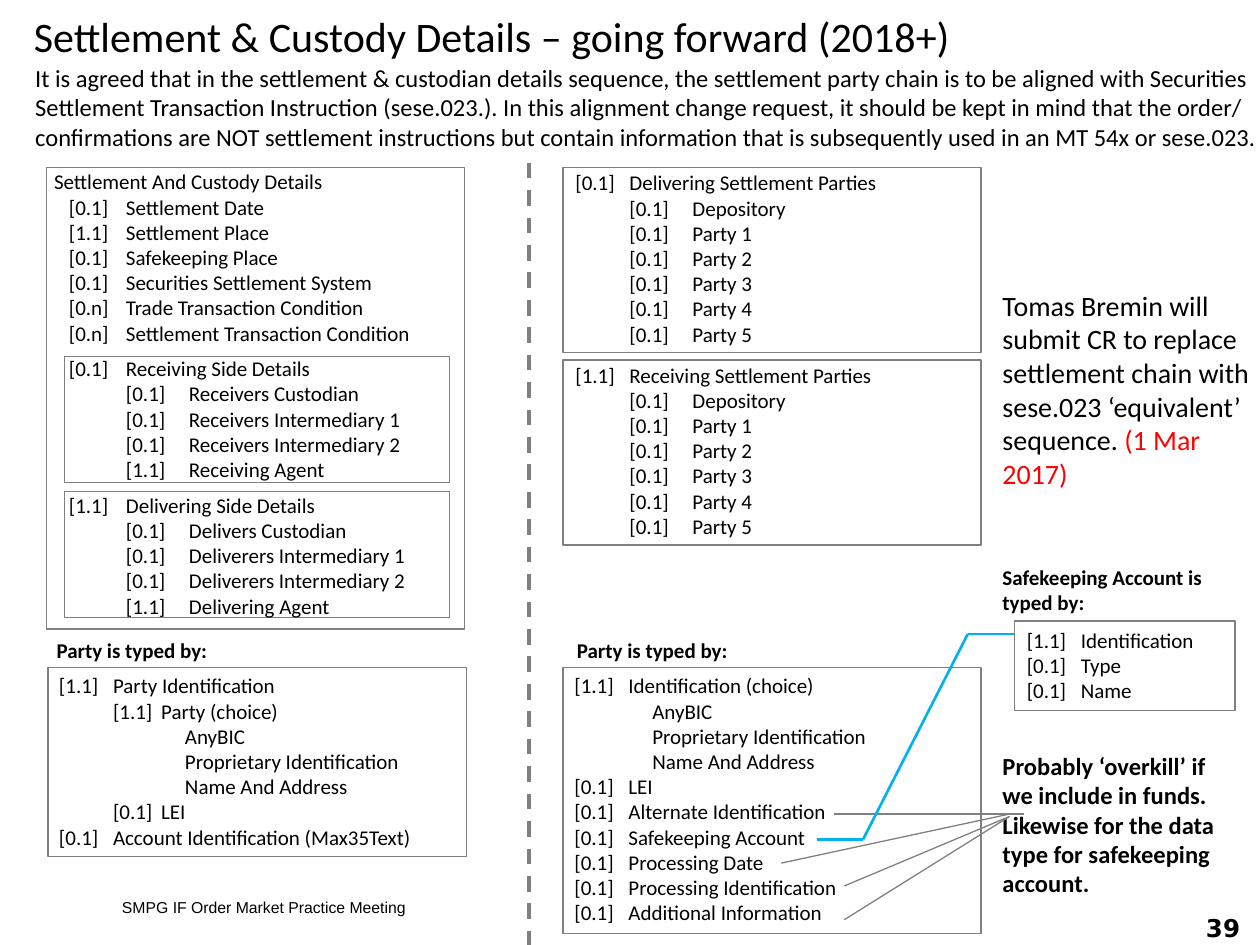
from lxml.etree import SubElement
from pptx import Presentation
from pptx.dml.color import RGBColor
from pptx.enum.dml import MSO_LINE
from pptx.enum.shapes import MSO_CONNECTOR, MSO_SHAPE
from pptx.enum.text import MSO_ANCHOR, MSO_AUTO_SIZE, PP_ALIGN
from pptx.oxml.ns import qn
from pptx.util import Cm, Pt

THEME = {
    "font": "Calibri", "footer_font": "Arial", "number_font": "DejaVu Sans",
    "text": "000000", "alert": "FF0000", "fill": "FFFFFF",
    "line": "808080", "accent": "00B0F0",
    "title": 24, "note": 16, "lead": 14, "list": 12, "footer": 9,
}

# Content: list rows are (leading tabs, multiplicity, name)
TITLE = "Settlement & Custody Details – going forward (2018+)"
LEAD = ("It is agreed that in the settlement & custodian details sequence, the settlement "
        "party chain is to be aligned with Securities Settlement Transaction Instruction "
        "(sese.023.). In this alignment change request, it should be kept in mind that the "
        "order/ confirmations are NOT settlement instructions but contain information that "
        "is subsequently used in an MT 54x or sese.023.")
CUSTODY = [
    (0, "", "Settlement And Custody Details"),
    (1, "[0.1]", "Settlement Date"),
    (1, "[1.1]", "Settlement Place"),
    (1, "[0.1]", "Safekeeping Place"),
    (1, "[0.1]", "Securities Settlement System"),
    (1, "[0.n]", "Trade Transaction Condition"),
    (1, "[0.n]", "Settlement Transaction Condition"),
    (1, "[0.1]", "Receiving Side Details"),
    (2, "[0.1]", "Receivers Custodian"),
    (2, "[0.1]", "Receivers Intermediary 1"),
    (2, "[0.1]", "Receivers Intermediary 2"),
    (2, "[1.1]", "Receiving Agent"),
    (1, "[1.1]", "Delivering Side Details"),
    (2, "[0.1]", "Delivers Custodian"),
    (2, "[0.1]", "Deliverers Intermediary 1"),
    (2, "[0.1]", "Deliverers Intermediary 2"),
    (2, "[1.1]", "Delivering Agent"),
]
CHAIN = [(1, "[0.1]", name) for name in ["Depository"] + [f"Party {n}" for n in range(1, 6)]]
SETTLEMENT = [(0, "[0.1]", "Delivering Settlement Parties"), *CHAIN,
              (0, "[1.1]", "Receiving Settlement Parties"), *CHAIN]
CHOICES = ["AnyBIC", "Proprietary Identification", "Name And Address"]
PARTY_NOW = [
    (0, "[1.1]", "Party Identification"),
    (1, "[1.1]", "Party (choice)"),
    *[(3, "", name) for name in CHOICES],
    (1, "[0.1]", "LEI"),
    (0, "[0.1]", "Account Identification (Max35Text)"),
]
PARTY_NEXT = [
    (0, "[1.1]", "Identification (choice)"),
    *[(2, "", name) for name in CHOICES],
    *[(0, "[0.1]", name) for name in (
        "LEI", "Alternate Identification", "Safekeeping Account", "Processing Date",
        "Processing Identification", "Additional Information")],
]
ACCOUNT = [(0, "[1.1]", "Identification"), (0, "[0.1]", "Type"), (0, "[0.1]", "Name")]

# Geometry in cm: left, top, width, height
FRAMES = [
    (0.94, 3.38, 8.43, 9.3), (0.97, 13.46, 8.43, 3.81),
    (11.35, 3.38, 8.43, 3.73), (11.35, 7.26, 8.43, 3.73),
    (11.35, 13.46, 8.43, 5.36), (20.45, 12.52, 4.45, 1.8),
    (1.3, 7.19, 7.77, 2.54), (1.3, 9.91, 7.77, 2.54),
]
# box, rows, tab stops, {row index: points after}
LISTS = [
    ((0.84, 3.28, 8.28, 9.4), CUSTODY, (0.3, 1.45, 2.72), {6: 6, 11: 6}),
    ((0.94, 13.44, 7.65, 3.84), PARTY_NOW, (1.09, 2.06, 2.54), {}),
    ((11.35, 3.3, 7.19, 7.75), SETTLEMENT, (1.09, 2.36), {6: 9}),
    ((11.33, 13.44, 7.65, 5.38), PARTY_NEXT, (1.09, 1.57), {}),
    ((20.45, 12.52, 4.8, 1.8), ACCOUNT, (1.09,), {}),
]
# box, paragraphs, size
LABELS = [
    ((0.89, 12.73, 3.58, 0.76), ["Party is typed by:"], "list"),
    ((11.38, 12.73, 3.58, 0.76), ["Party is typed by:"], "list"),
    ((19.96, 11.25, 4.8, 1.27), ["Safekeeping Account is typed by:"], "list"),
    ((19.96, 15.01, 4.88, 3.25), ["Probably ‘overkill’ if we include in funds.",
                                  "Likewise for the data type for safekeeping account."], "lead"),
]
# x1, y1, x2, y2
POINTERS = [(16.81, 16.41, 20.65, 16.41), (15.75, 17.4, 20.35, 16.41),
            (17.02, 17.86, 20.35, 16.46), (17.02, 18.54, 20.35, 16.46)]
ACCOUNT_PATH = [(16.46, 16.92), (17.4, 16.92), (19.51, 12.78), (20.45, 12.78)]


def color(key):
    return RGBColor.from_string(THEME[key])


def style(font, size, face="font", bold=False, ink="text"):
    font.name, font.size, font.bold = THEME[face], Pt(THEME[size]), bold
    font.color.rgb = color(ink)


def add_text(s, box, lines, size, face="font", bold=False, tabs=(), grow=True):
    tf = s.shapes.add_textbox(*map(Cm, box)).text_frame
    tf.word_wrap = True
    if grow:
        tf.auto_size = MSO_AUTO_SIZE.SHAPE_TO_FIT_TEXT
    else:
        tf.vertical_anchor = MSO_ANCHOR.MIDDLE
    for i, line in enumerate(lines):
        p = tf.add_paragraph() if i else tf.paragraphs[0]
        p.text = line
        if tabs:
            stops = SubElement(p._p.get_or_add_pPr(), qn("a:tabLst"))
            for stop in tabs:
                SubElement(stops, qn("a:tab"), pos=str(int(Cm(stop))), algn="l")
        for r in p.runs:
            style(r.font, size, face, bold)
    return tf


def add_line(s, ends, width, ink="line"):
    line = s.shapes.add_connector(MSO_CONNECTOR.STRAIGHT, *map(Cm, ends))
    line.line.color.rgb, line.line.width = color(ink), Pt(width)
    SubElement(line._element.spPr, qn("a:effectLst"))
    return line


def main():
    prs = Presentation()
    prs.slide_width, prs.slide_height = Cm(25.4), Cm(19.05)
    s = prs.slides.add_slide(prs.slide_layouts[5])

    # Title and lead
    title = s.shapes.title
    title.left, title.top, title.width, title.height = map(Cm, (0.43, 0, 24.71, 1.42))
    tf = title.text_frame
    tf.text, tf.vertical_anchor = TITLE, MSO_ANCHOR.MIDDLE
    tf.paragraphs[0].alignment = PP_ALIGN.LEFT
    style(tf.paragraphs[0].runs[0].font, "title")
    add_text(s, (0.46, 1.14, 25.81, 2.06), [LEAD], "lead")

    # Frames
    for box in FRAMES:
        sp = s.shapes.add_shape(MSO_SHAPE.RECTANGLE, *map(Cm, box))
        sp.shadow.inherit = False
        sp.fill.solid()
        sp.fill.fore_color.rgb = color("fill")
        sp.line.color.rgb, sp.line.width = color("line"), Pt(0.75)

    # Lists and labels
    for box, rows, tabs, gaps in LISTS:
        lines = ["\t" * depth + (f"{count}\t{name}" if count else name)
                 for depth, count, name in rows]
        tf = add_text(s, box, lines, "list", tabs=tabs)
        for row, points in gaps.items():
            tf.paragraphs[row].space_after = Pt(points)
    for box, lines, size in LABELS:
        add_text(s, box, lines, size, bold=True)

    # Note with the due date
    tf = add_text(s, (19.96, 5.69, 5.61, 4.37),
                  ["Tomas Bremin will submit CR to replace settlement chain with "
                   "sese.023 ‘equivalent’ sequence. "], "note")
    r = tf.paragraphs[0].add_run()
    r.text = "(1 Mar 2017)"
    style(r.font, "note", ink="alert")

    # Lines
    for ends in POINTERS:
        add_line(s, ends, 0.75)
    for start, end in zip(ACCOUNT_PATH, ACCOUNT_PATH[1:]):
        add_line(s, start + end, 1.5, "accent")
    add_line(s, (10.67, 3.28, 10.67, 19.05), 2.25).line.dash_style = MSO_LINE.DASH

    # Footer and page number
    add_text(s, (2.21, 17.96, 15.77, 0.64), ["SMPG IF Order Market Practice Meeting"],
             "footer", "footer_font", grow=False)
    tf = add_text(s, (23.14, 18.39, 2.11, 0.64), ["39"], "lead", "number_font",
                  bold=True, grow=False)
    tf.paragraphs[0].alignment = PP_ALIGN.RIGHT

    prs.save("out.pptx")


if __name__ == "__main__":
    main()
